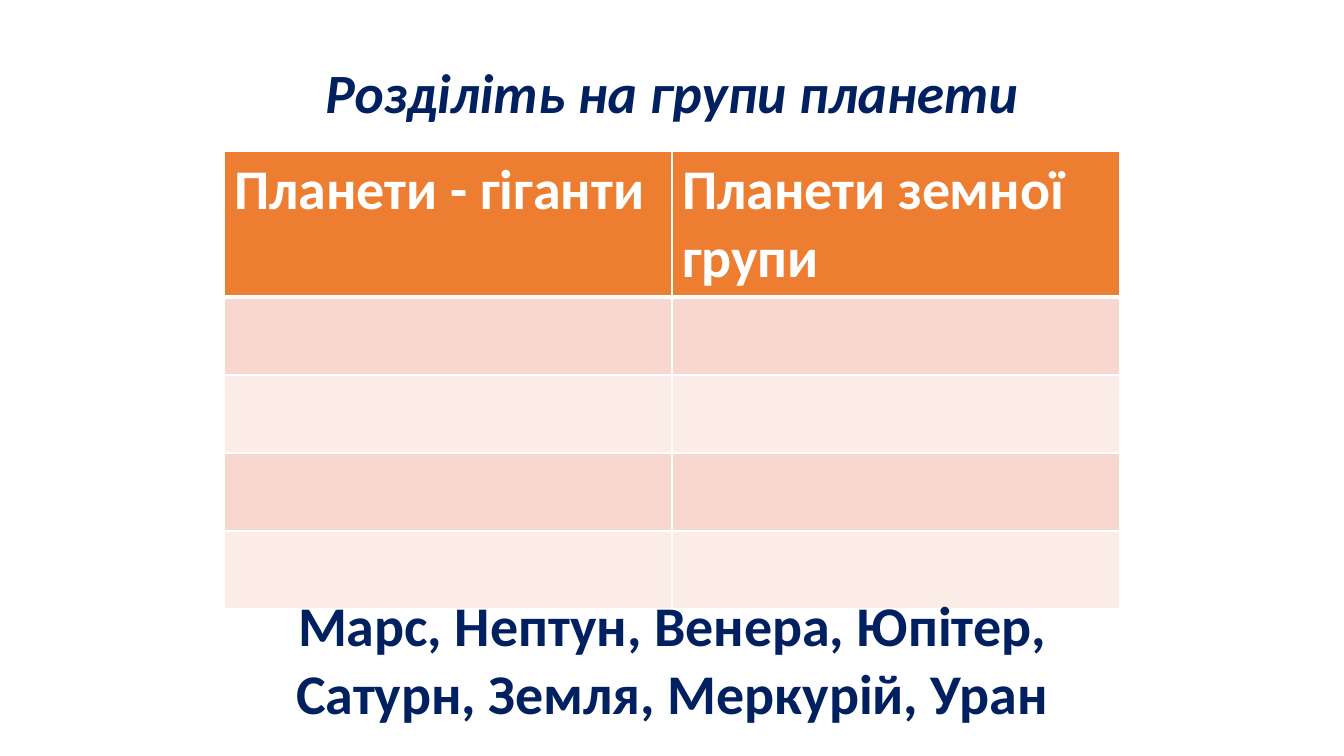
from pptx import Presentation
from pptx.dml.color import RGBColor
from pptx.enum.text import MSO_ANCHOR, PP_ALIGN
from pptx.oxml.ns import qn
from pptx.util import Pt
from lxml import etree

CENTER, LEFT = PP_ALIGN.CENTER, PP_ALIGN.LEFT
TOP, MIDDLE = MSO_ANCHOR.TOP, MSO_ANCHOR.MIDDLE

THEME = {
    "font": "Calibri",
    "navy": "002060",
    "white": "FFFFFF",
    "header": "ED7D31",
    "bands": ("F8D7CE", "FCECE8"),
    "title_size": 39.6,
    "body_size": 40,
}
EMU_PER_PX = 914400 / 100.8


def px(n):
    return round(n * EMU_PER_PX)


def write(tf, lines, size, color, align=LEFT, spacing=None, **formats):
    """Put one paragraph per line into a text frame."""
    tf.word_wrap = True
    for i, line in enumerate(lines):
        p = tf.paragraphs[0] if i == 0 else tf.add_paragraph()
        p.alignment, p.line_spacing = align, spacing
        r = p.add_run()
        r.text = line
        values = {"name": THEME["font"], "size": Pt(size), "bold": True, **formats}
        for name, value in values.items():
            setattr(r.font, name, value)
        r.font.color.rgb = RGBColor.from_string(THEME[color])


def add_text(s, box, lines, size, anchor=TOP, pad=5, **formats):
    tf = s.shapes.add_textbox(*map(px, box)).text_frame
    tf.vertical_anchor = anchor
    tf.margin_top = tf.margin_bottom = px(pad)
    write(tf, lines, size, "navy", CENTER, **formats)


def set_borders(cell, widths):
    """Draw the white cell edges; widths are points by edge tag."""
    tcPr = cell._tc.get_or_add_tcPr()
    for edge, width in widths.items():
        ln = etree.SubElement(tcPr, qn(f"a:{edge}"), w=str(Pt(width)))
        fill = etree.SubElement(ln, qn("a:solidFill"))
        etree.SubElement(fill, qn("a:srgbClr"), val=THEME["white"])


def add_group_table(s, left, top, col_width, row_heights, headings):
    width = col_width * len(headings)
    table = s.shapes.add_table(len(row_heights), len(headings), px(left), px(top),
                               px(width), px(sum(row_heights))).table
    for col in table.columns:
        col.width = px(col_width)
    for i, height in enumerate(row_heights):
        table.rows[i].height = px(height)
        color = THEME["bands"][(i - 1) % 2] if i else THEME["header"]
        for j, heading in enumerate(headings):
            cell = table.cell(i, j)
            set_borders(cell, {"lnL": 1, "lnR": 1, "lnT": 3 if i == 1 else 1,
                               "lnB": 1 if i else 3})
            cell.fill.solid()
            cell.fill.fore_color.rgb = RGBColor.from_string(color)
            if i == 0:
                write(cell.text_frame, [heading], THEME["body_size"], "white")


def main():
    prs = Presentation()
    prs.slide_width, prs.slide_height = px(1344), px(756)
    s = prs.slides.add_slide(prs.slide_layouts[6])

    # Title
    add_text(s, (92, 65, 1160, 61), ["Розділіть на групи планети"],
             THEME["title_size"], MIDDLE, pad=0, spacing=0.9, italic=True)

    # Table to fill in
    add_group_table(s, 224, 151, 448, [146] + [78] * 4,
                    ["Планети - гіганти", "Планети земної групи"])

    # Planets to sort
    add_text(s, (63, 586, 1218, 146),
             ["Марс, Нептун, Венера, Юпітер,", "Сатурн, Земля, Меркурій, Уран"],
             THEME["body_size"])

    prs.save("out.pptx")


if __name__ == "__main__":
    main()
